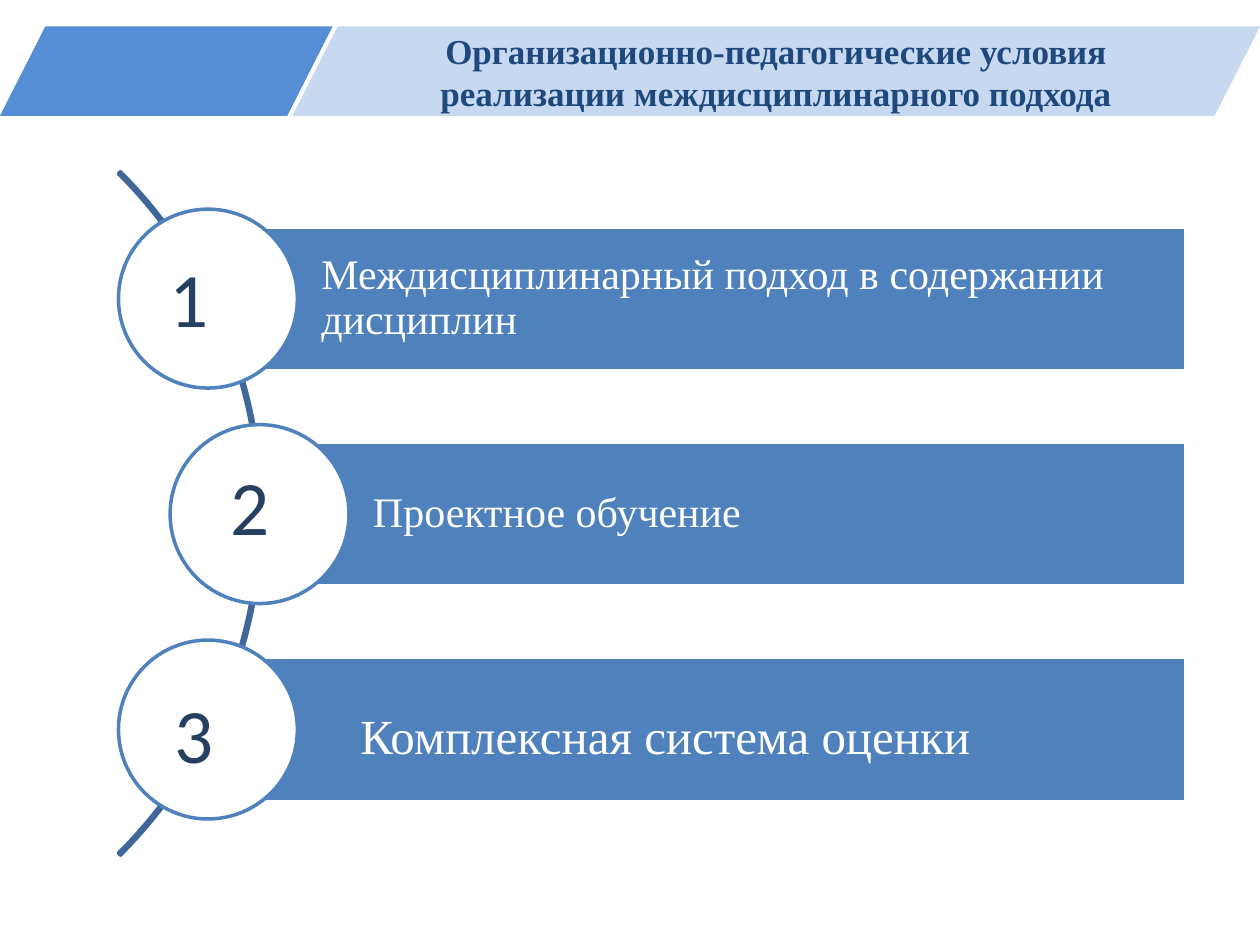
from pptx import Presentation
from pptx.dml.color import RGBColor
from pptx.enum.shapes import MSO_SHAPE
from pptx.enum.text import MSO_ANCHOR, PP_ALIGN
from pptx.util import Inches, Pt

ARC, RECT, OVAL, SLANT = (MSO_SHAPE.BLOCK_ARC, MSO_SHAPE.RECTANGLE,
                          MSO_SHAPE.OVAL, MSO_SHAPE.PARALLELOGRAM)
MIDDLE = MSO_ANCHOR.MIDDLE
LEFT, CENTER = PP_ALIGN.LEFT, PP_ALIGN.CENTER

WHITE = RGBColor(0xFF, 0xFF, 0xFF)
BLUE = RGBColor(0x4F, 0x81, 0xBD)
STEEL = RGBColor(0x3F, 0x67, 0x97)
NAVY = RGBColor(0x25, 0x40, 0x61)
INK = RGBColor(0x1F, 0x49, 0x7D)
BRIGHT = RGBColor(0x55, 0x8E, 0xD5)
PALE = RGBColor(0xC6, 0xD9, 0xF1)
SERIF, SANS = "Times New Roman", "Calibri"

TITLE = "Организационно-педагогические условия реализации междисциплинарного подхода"
BANDS = [(0, 2.64, BRIGHT), (2.32, 7.68, PALE)]
# text, size, insets, bar left, digit place
ITEMS = [
    ("Междисциплинарный подход в содержании дисциплин", 24,
     (0.9, 0.07, 0.07, 0.07), 1.65, (1.25, 1.94)),
    ("Проектное обучение", 24,
     (0.9, 0.07, 0.07, 0.07), 2.06, (1.73, 3.59)),
    ("Комплексная система оценки", 28,
     (1.21, 0.28, 0.13, 0.13), 1.65, (1.29, 5.4)),
]
TOP, STEP, RIGHT = 1.8, 1.71, 9.41
BAR, DISC = 1.14, 1.42


def draw(kind, x, y, w, h, fill=None, line=None):
    part = shapes.add_shape(kind, Inches(x), Inches(y), Inches(w), Inches(h))
    part.shadow.inherit = False
    if fill is None:
        part.fill.background()
    else:
        part.fill.solid()
        part.fill.fore_color.rgb = fill
    if line is None:
        part.line.fill.background()
    else:
        part.line.color.rgb = line
        part.line.width = Pt(2)
    return part


def write(part, text, size, face, color, pads, align=LEFT, bold=False):
    frame = part.text_frame
    frame.word_wrap = True
    (frame.margin_left, frame.margin_top,
     frame.margin_right, frame.margin_bottom) = map(Inches, pads)
    frame.text = text
    para = frame.paragraphs[0]
    para.alignment = align
    font = para.font
    font.size, font.name, font.bold = Pt(size), face, bold
    font.color.rgb = color
    return frame


deck = Presentation()
deck.slide_width, deck.slide_height = Inches(10), Inches(7.5)
slide = deck.slides.add_slide(deck.slide_layouts[5])
shapes = slide.shapes

arc = draw(ARC, -5.59, 0.24, 7.67, 7.67, line=STEEL)
for i, value in enumerate((189, 27, 0.003)):
    arc.adjustments[i] = value

for i, (text, size, pads, left, spot) in enumerate(ITEMS):
    top = TOP + i * STEP
    bar = draw(RECT, left, top, RIGHT - left, BAR, BLUE, WHITE)
    frame = write(bar, text, size, SERIF, WHITE, pads)
    frame.vertical_anchor = MIDDLE
    frame.paragraphs[0].line_spacing = 0.9
    draw(OVAL, left - DISC / 2, top + (BAR - DISC) / 2, DISC, DISC, WHITE, BLUE)
    box = shapes.add_textbox(*map(Inches, (*spot, 0.7, 0.84)))
    write(box, str(i + 1), 44, SANS, NAVY, (0.1, 0.05, 0.1, 0.05))

for left, width, color in BANDS:
    band = draw(SLANT, left, 0.21, width, 0.71, color)
    band.adjustments[0] = 0.507

title = shapes.title
title.left, title.top, title.width, title.height = map(
    Inches, (3.16, 0.21, 6, 0.71))
frame = write(title, TITLE, 20, SERIF, INK, (0.1, 0.05, 0.1, 0.05), CENTER, True)
frame.vertical_anchor = MIDDLE
shapes._spTree.append(title._element)

deck.save("out.pptx")
